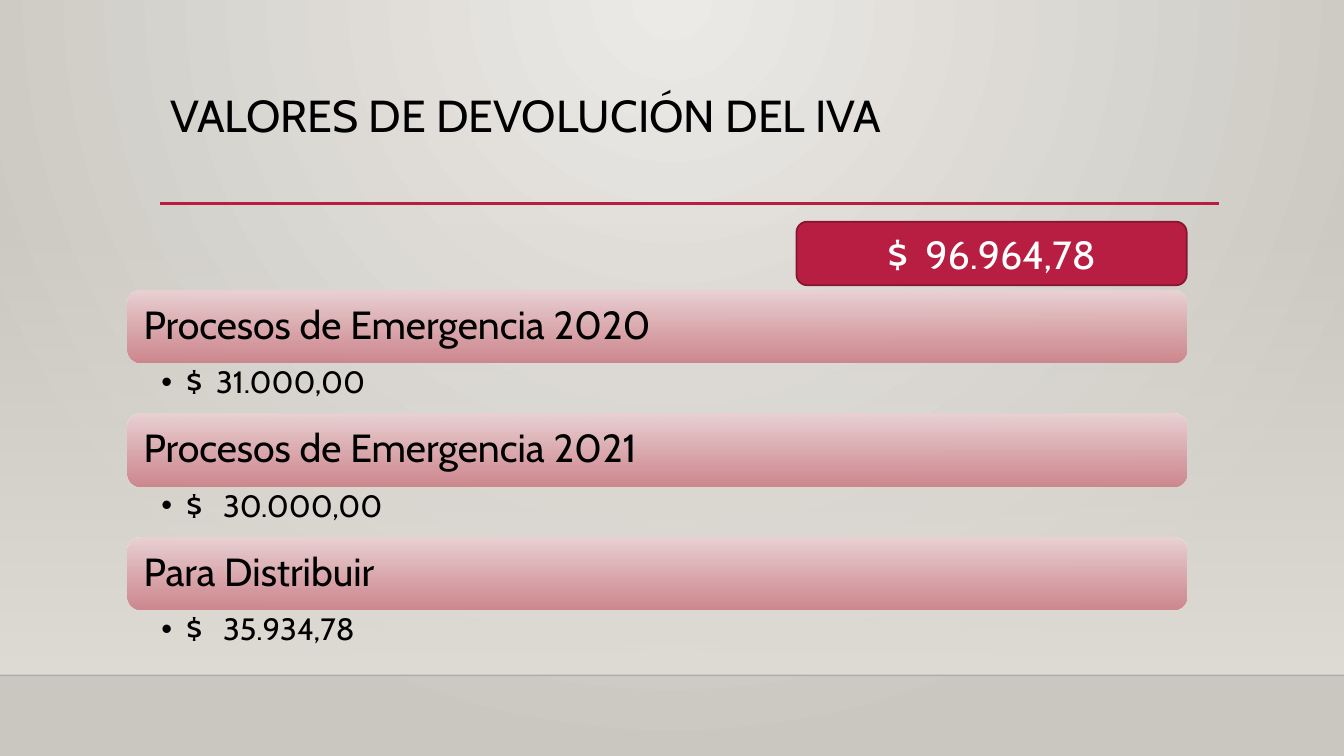
from lxml.etree import SubElement
from pptx import Presentation
from pptx.dml.color import RGBColor
from pptx.enum.shapes import MSO_CONNECTOR, MSO_SHAPE
from pptx.enum.text import MSO_ANCHOR, PP_ALIGN
from pptx.oxml.ns import qn
from pptx.util import Inches, Pt

WIDTH, HEIGHT = 13.33, 7.5
FLOOR_TOP = 6.7
FONT = "Cabin"
CRIMSON = "B71E42"

# Column shared by the list and the total
LIST_LEFT, LIST_TOP, LIST_WIDTH = 1.27, 2.88, 10.5
BAR_HEIGHT, ROW_PITCH = 0.72, 1.225

PROCESSES = [
    ("Procesos de Emergencia 2020", "$  31.000,00"),
    ("Procesos de Emergencia 2021", "$   30.000,00"),
    ("Para Distribuir", "$   35.934,78"),
]


def color(value):
    return RGBColor.from_string(value)


def box_of(*lengths):
    return [Inches(length) for length in lengths]


def set_alpha(color_element, percent):
    SubElement(color_element, qn("a:alpha"), val=str(percent * 1000))


def set_gradient(parent, stops, focus=None):
    """Turn a solid fill into a top-down gradient, or a radial one around focus."""
    solid = parent.find(qn("a:solidFill"))
    gradient = solid.makeelement(qn("a:gradFill"), {"rotWithShape": "1"})
    stop_list = SubElement(gradient, qn("a:gsLst"))
    for position, value, alpha in stops:
        stop = SubElement(stop_list, qn("a:gs"), pos=str(position * 1000))
        set_alpha(SubElement(stop, qn("a:srgbClr"), val=value), alpha)
    if focus:
        shade = SubElement(gradient, qn("a:path"), {"path": "circle"})
        edges = {side: str(share * 1000) for side, share in zip("ltrb", focus)}
        SubElement(shade, qn("a:fillToRect"), edges)
    else:
        SubElement(gradient, qn("a:lin"), ang="5400000", scaled="0")
    parent.replace(solid, gradient)


def add_block(page, preset, box, fill):
    block = page.shapes.add_shape(preset, *box_of(*box))
    block.shadow.inherit = False
    block.fill.solid()
    block.fill.fore_color.rgb = color(fill)
    block.line.fill.background()
    return block


def add_rule(page, left, right, top, value, weight):
    rule = page.shapes.add_connector(
        MSO_CONNECTOR.STRAIGHT, *box_of(left, top, right, top))
    rule.line.color.rgb = color(value)
    rule.line.width = Pt(weight)
    SubElement(rule._element.spPr, qn("a:effectLst"))
    return rule


def write(frame, text, size, value="000000", margins=(0.1, 0.05, 0.1, 0.05),
          anchor=MSO_ANCHOR.TOP, spacing=0.9):
    frame.word_wrap = True
    frame.vertical_anchor = anchor
    (frame.margin_left, frame.margin_top,
     frame.margin_right, frame.margin_bottom) = box_of(*margins)
    para = frame.paragraphs[0]
    para.text = text
    para.line_spacing = spacing
    para.font.name = FONT
    para.font.size = Pt(size)
    para.font.color.rgb = color(value)
    return para


def add_backdrop(page):
    page.background.fill.solid()
    page.background.fill.fore_color.rgb = color("ECEAE7")
    set_gradient(page.element.find(".//" + qn("p:bgPr")),
                 [(0, "ECEAE7", 100), (100, "CAC7C1", 100)], (43, 0, 43, 100))
    # Wall that fades in towards the floor
    wall_top = 2.21
    wall = add_block(page, MSO_SHAPE.RECTANGLE,
                     (0, wall_top, WIDTH, FLOOR_TOP - wall_top), "DFDBD5")
    set_gradient(wall._element.spPr, [(0, "DFDBD5", 0), (100, "DFDBD5", 100)])
    floor_edge = add_rule(page, 0, WIDTH, FLOOR_TOP, "000001", 1)
    set_alpha(floor_edge._element.find(".//" + qn("a:srgbClr")), 20)


def add_title(page, left, top, width, height):
    title = page.shapes.title
    title.left, title.top, title.width, title.height = box_of(left, top, width, height)
    para = write(title.text_frame, "VALORES DE DEVOLUCIÓN DEL IVA", 32)
    para.alignment = PP_ALIGN.LEFT
    add_rule(page, left, left + width, top + height, CRIMSON, 2.5)


def add_process(page, left, top, width, name, amount):
    # Heading bar
    bar = add_block(page, MSO_SHAPE.ROUNDED_RECTANGLE,
                    (left, top, width, BAR_HEIGHT), "EAD1D3")
    set_gradient(bar._element.spPr, [(0, "EAD1D3", 100), (100, "CD828A", 92)])
    heading = write(bar.text_frame, name, 28, margins=(0.12, 0.12, 0.12, 0.12),
                    anchor=MSO_ANCHOR.MIDDLE)
    heading.alignment = PP_ALIGN.LEFT

    # Bulleted amount
    detail = page.shapes.add_textbox(*box_of(left, top + BAR_HEIGHT, width, 0.51))
    para = detail.text_frame.paragraphs[0]
    properties = para._p.get_or_add_pPr()
    properties.set("marL", str(Inches(0.25)))
    properties.set("indent", str(-Inches(0.25)))
    SubElement(properties, qn("a:buFont"), typeface="Arial")
    SubElement(properties, qn("a:buChar"), char="•")
    write(detail.text_frame, amount, 22, margins=(0.33, 0.04, 0.22, 0.04))


def add_total(page, left, top, width, height):
    total = add_block(page, MSO_SHAPE.ROUNDED_RECTANGLE,
                      (left, top, width, height), CRIMSON)
    total.line.color.rgb = color("871631")
    total.line.width = Pt(1.25)
    para = write(total.text_frame, "$  96.964,78", 28, "FFFFFF",
                 anchor=MSO_ANCHOR.MIDDLE, spacing=1.0)
    para.alignment = PP_ALIGN.CENTER


def main():
    deck = Presentation()
    deck.slide_width, deck.slide_height = box_of(WIDTH, HEIGHT)
    page = deck.slides.add_slide(deck.slide_layouts[5])
    add_backdrop(page)
    add_title(page, 1.59, 0.88, 10.5, 1.14)
    for row, (name, amount) in enumerate(PROCESSES):
        add_process(page, LIST_LEFT, LIST_TOP + row * ROW_PITCH, LIST_WIDTH,
                    name, amount)
    total_width = 3.87
    add_total(page, LIST_LEFT + LIST_WIDTH - total_width, 2.2, total_width, 0.63)
    deck.save("out.pptx")


if __name__ == "__main__":
    main()
